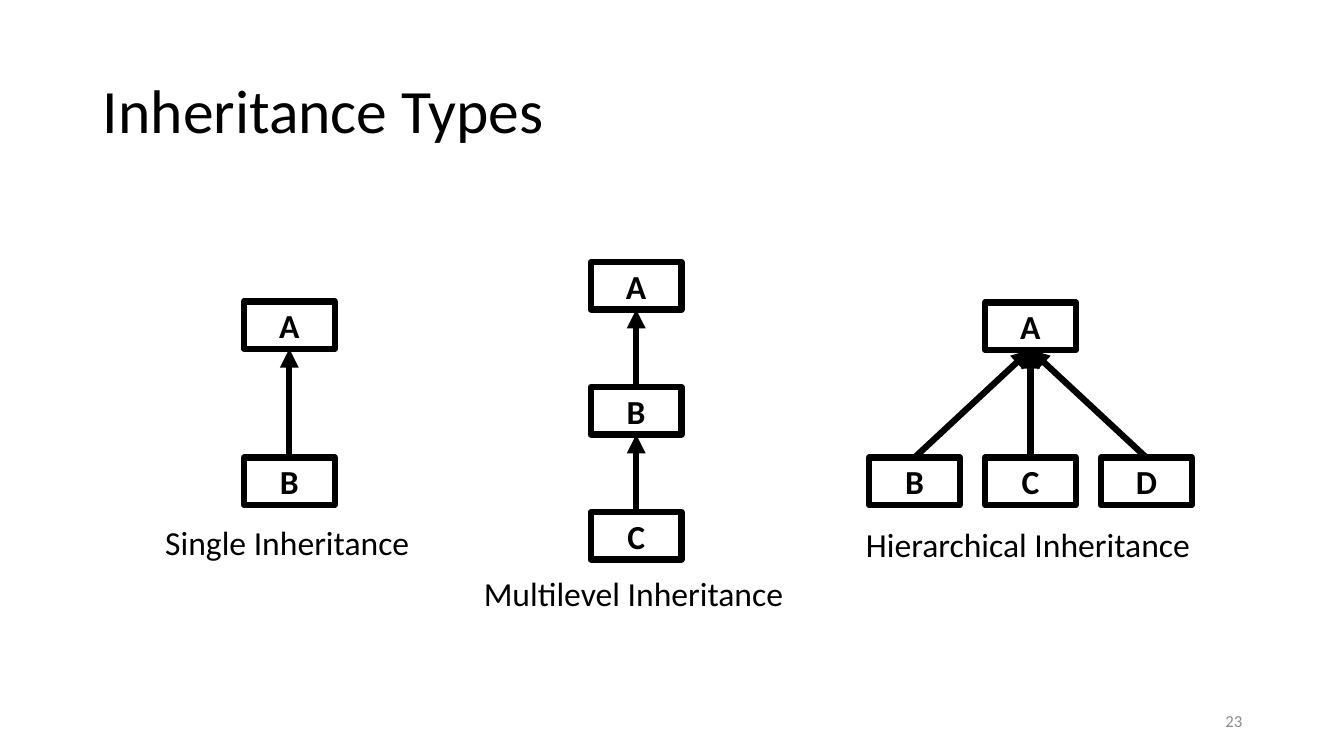
from lxml import etree
from pptx import Presentation
from pptx.dml.color import RGBColor
from pptx.enum import shapes, text
from pptx.oxml.ns import qn
from pptx.util import Inches, Pt

TITLE = "Inheritance Types"
PAGE_NUMBER = "23"
COLORS = {"ink": "000000", "paper": "FFFFFF", "muted": "8C8C8C"}
FONT = "Calibri"
BOX_W, BOX_H, LINE_W = 0.9, 0.47, 4.5

# classes: name -> (left, top); parents: (child, parent); caption: left, top, width
DIAGRAMS = [
    {"caption": ("Single Inheritance", 1.54, 5.13, 2.65), "grouped": True,
     "classes": {"A": (2.42, 2.99), "B": (2.42, 4.54)},
     "parents": ["BA"]},
    {"caption": ("Multilevel Inheritance", 4.7, 5.63, 3.2), "grouped": True,
     "classes": {name: (5.86, 2.6 + 1.24 * level) for level, name in enumerate("ABC")},
     "parents": ["BA", "CB"]},
    {"caption": ("Hierarchical Inheritance", 8.49, 5.15, 3.45), "grouped": False,
     "classes": {"A": (9.77, 3.0),
                 **{name: (8.62 + 1.15 * column, 4.54) for column, name in enumerate("BCD")}},
     "parents": ["BA", "CA", "DA"]},
]


def color(name):
    return RGBColor.from_string(COLORS[name])


def write(shape, words, size, align="LEFT", anchor="MIDDLE", ink="ink", bold=False, wrap=True):
    frame = shape.text_frame
    frame.text = words
    frame.word_wrap = wrap
    frame.vertical_anchor = text.MSO_ANCHOR[anchor]
    paragraph = frame.paragraphs[0]
    paragraph.alignment = text.PP_ALIGN[align]
    font = paragraph.runs[0].font
    for key, value in {"name": FONT, "size": Pt(size), "bold": bold}.items():
        setattr(font, key, value)
    font.color.rgb = color(ink)


def outline(line):
    line.color.rgb = color("ink")
    line.width = Pt(LINE_W)


def add_class(parts, name, left, top):
    box = parts.add_shape(shapes.MSO_SHAPE.RECTANGLE, *map(Inches, (left, top, BOX_W, BOX_H)))
    box.shadow.inherit = False
    box.fill.solid()
    box.fill.fore_color.rgb = color("paper")
    outline(box.line)
    write(box, name, 24, align="CENTER", bold=True)
    return box


def add_arrow(parts, child, parent):
    """Point from the top of the child box to the bottom of its parent."""
    arrow = parts.add_connector(
        shapes.MSO_CONNECTOR.STRAIGHT,
        child.left + child.width // 2, child.top,
        parent.left + parent.width // 2, parent.top + parent.height)
    arrow.begin_connect(child, 0)
    arrow.end_connect(parent, 2)
    outline(arrow.line)
    etree.SubElement(arrow.line._get_or_add_ln(), qn("a:tailEnd"), type="triangle")
    etree.SubElement(arrow._element.spPr, qn("a:effectLst"))


def add_diagram(slide, diagram):
    parts = slide.shapes.add_group_shape().shapes if diagram["grouped"] else slide.shapes
    boxes = {name: add_class(parts, name, *place) for name, place in diagram["classes"].items()}
    for child, parent in diagram["parents"]:
        add_arrow(parts, boxes[child], boxes[parent])
    words, left, top, width = diagram["caption"]
    caption = parts.add_textbox(*map(Inches, (left, top, width, 0.5)))
    write(caption, words, 24, anchor="TOP", wrap=False)
    caption.text_frame.auto_size = text.MSO_AUTO_SIZE.SHAPE_TO_FIT_TEXT


def main():
    deck = Presentation()
    deck.slide_width, deck.slide_height = Inches(13.33), Inches(7.5)
    slide = deck.slides.add_slide(deck.slide_layouts[5])

    title = slide.shapes.title
    title.left, title.top, title.width, title.height = map(Inches, (0.92, 0.4, 11.5, 1.45))
    write(title, TITLE, 44)
    title.text_frame.paragraphs[0].line_spacing = 0.9

    for diagram in DIAGRAMS:
        add_diagram(slide, diagram)

    page = slide.shapes.add_textbox(*map(Inches, (9.42, 6.95, 3, 0.4)))
    write(page, PAGE_NUMBER, 12, align="RIGHT", ink="muted")
    deck.save("out.pptx")


if __name__ == "__main__":
    main()
